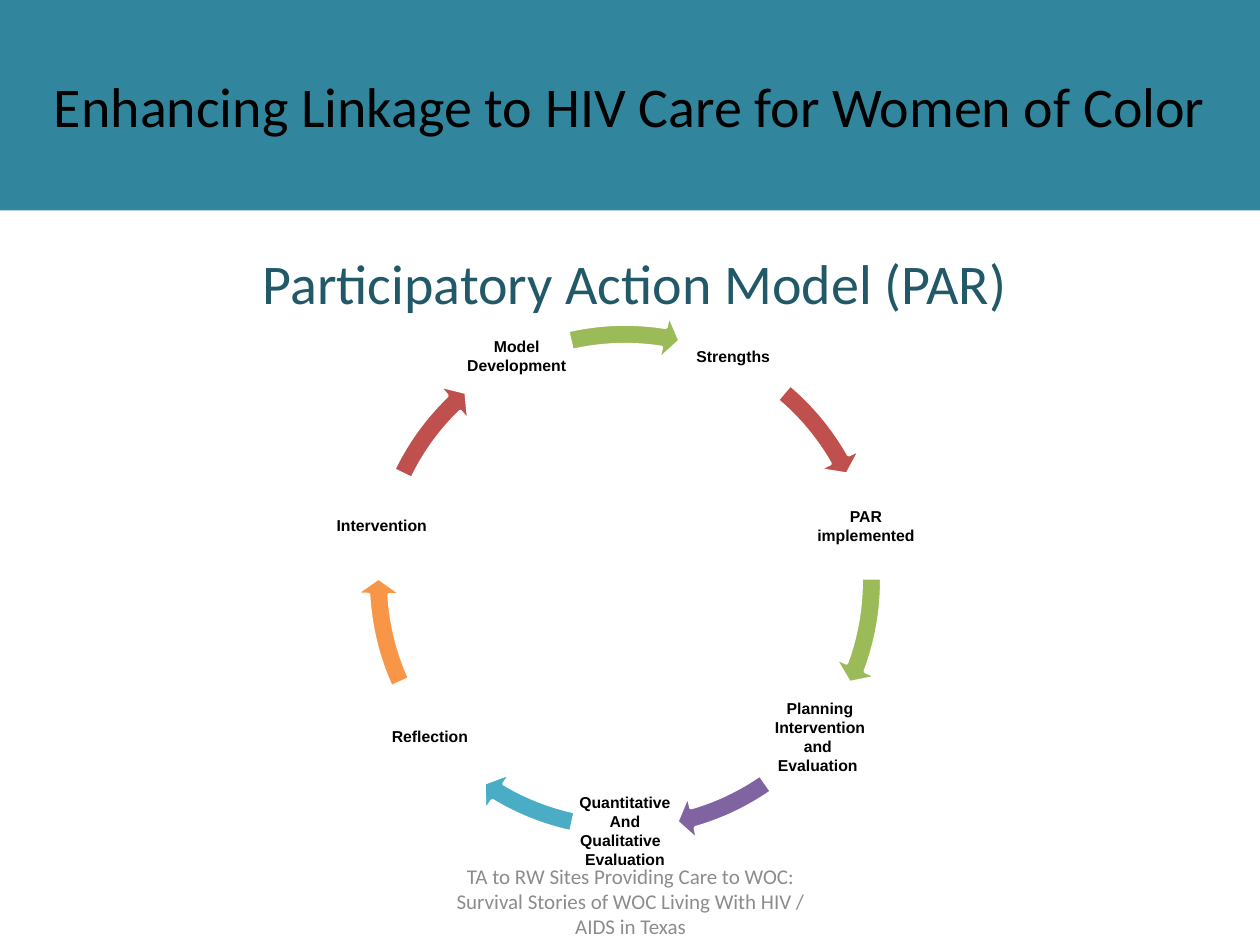
from math import cos, radians, sin

from pptx import Presentation
from pptx.dml.color import RGBColor
from pptx.enum.shapes import MSO_SHAPE as Shape
from pptx.enum.text import MSO_ANCHOR as Anchor, PP_ALIGN as Align
from pptx.util import Inches, Pt

COLORS = {
    "banner": "31859C", "black": "000000", "white": "FFFFFF",
    "heading": "215968", "footer": "8C8C8C",
    "red": "C0504D", "green": "9BBB59", "purple": "8064A2",
    "aqua": "4BACC6", "orange": "F79646",
}

TITLE = "Enhancing Linkage to HIV Care for Women of Color"
HEADING = "Participatory Action Model (PAR)"
FOOTER = ("TA to RW Sites Providing Care to WOC: Survival Stories of WOC "
          "Living With HIV / AIDS in Texas")

# Clockwise from the top right: label lines, then the colour and the start and
# end angles (degrees) of the arrow that leaves the label
STAGES = [
    (["Strengths"], "red", 310.1, 330.44),
    (["PAR  implemented "], "green", 359.3, 20.49),
    (["Planning", "Intervention and ", "Evaluation "], "purple", 55.14, 73.95),
    (["Quantitative", "And", "Qualitative  ", "Evaluation"], "aqua", 102.14, 120.95),
    (["Reflection"], "orange", 155.59, 176.79),
    (["Intervention"], "red", 205.64, 225.98),
    (["Model", "Development"], "green", 257.08, 279.01),
]

CENTER_X, CENTER_Y = 4.96, 4.61
LABEL_RADIUS, LABEL_SIZE = 1.98, 0.83
ARROW_SIZE = 4.29
ARROW_THICKNESS, ARROW_HEAD_WIDTH, ARROW_HEAD_ANGLE = 0.038, 0.044, 3.92
ANGLE_UNIT = 0.6  # one degree as an adjustment value


def color(name):
    return RGBColor.from_string(COLORS[name])


def write(shape, lines, size, font, color_name, bold=False, anchor=Anchor.MIDDLE):
    frame = shape.text_frame
    frame.word_wrap = True
    frame.vertical_anchor = anchor
    for index, line in enumerate(lines):
        paragraph = frame.add_paragraph() if index else frame.paragraphs[0]
        paragraph.alignment = Align.CENTER
        run = paragraph.add_run()
        run.text = line
        run.font.size = Pt(size)
        run.font.name = font
        run.font.bold = bold
        run.font.color.rgb = color(color_name)


def centered_square(size, x, y):
    return [Inches(v) for v in (x - size / 2, y - size / 2, size, size)]


def add_text_box(slide, box):
    return slide.shapes.add_textbox(*[Inches(v) for v in box])


def add_banner(slide):
    banner = slide.shapes.add_shape(
        Shape.RECTANGLE, 0, 0, Inches(10), Inches(1.67))
    banner.shadow.inherit = False
    banner.fill.solid()
    banner.fill.fore_color.rgb = color("banner")
    banner.line.fill.background()
    write(banner, [TITLE], 32, "Calibri", "black")


def add_label(shapes, lines, angle):
    x = CENTER_X + LABEL_RADIUS * cos(radians(angle))
    y = CENTER_Y + LABEL_RADIUS * sin(radians(angle))
    label = shapes.add_textbox(*centered_square(LABEL_SIZE, x, y))
    frame = label.text_frame
    frame.margin_left = frame.margin_right = Inches(0.01)
    frame.margin_top = frame.margin_bottom = Inches(0.01)
    write(label, lines, 9, "Arial", "black", bold=True)


def add_arrow(shapes, color_name, start, end):
    arrow = shapes.add_shape(
        Shape.CIRCULAR_ARROW, *centered_square(ARROW_SIZE, CENTER_X, CENTER_Y))
    values = (ARROW_THICKNESS, ARROW_HEAD_ANGLE * ANGLE_UNIT, end * ANGLE_UNIT,
              start * ANGLE_UNIT, ARROW_HEAD_WIDTH)
    for index, value in enumerate(values):
        arrow.adjustments[index] = value
    arrow.shadow.inherit = False
    arrow.fill.solid()
    arrow.fill.fore_color.rgb = color(color_name)
    arrow.line.color.rgb = color("white")
    arrow.line.width = Pt(2)


def add_cycle(slide):
    shapes = slide.shapes.add_group_shape().shapes
    step = 360 / len(STAGES)
    for index, (lines, color_name, start, end) in enumerate(STAGES):
        add_label(shapes, lines, -90 + step * (index + 0.5))
        add_arrow(shapes, color_name, start, end)


def main():
    presentation = Presentation()
    presentation.slide_width = Inches(10)
    presentation.slide_height = Inches(7.5)
    slide = presentation.slides.add_slide(presentation.slide_layouts[6])

    add_banner(slide)
    add_cycle(slide)
    write(add_text_box(slide, (0.33, 1.92, 9.42, 0.64)), [HEADING],
          32, "Calibri", "heading", anchor=Anchor.TOP)
    write(add_text_box(slide, (3.42, 6.95, 3.17, 0.4)), [FOOTER],
          12, "Calibri", "footer")

    presentation.save("out.pptx")


if __name__ == "__main__":
    main()
